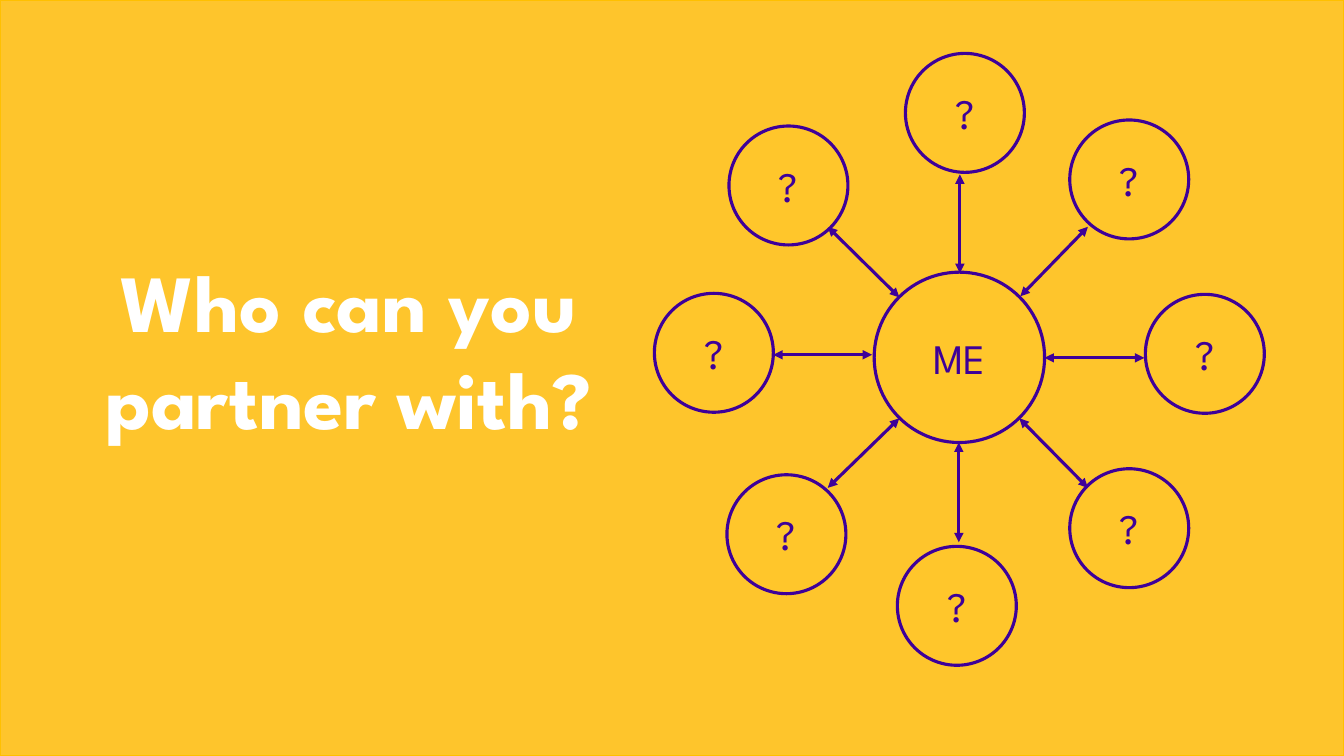
from lxml import etree
from pptx import Presentation
from pptx.dml.color import RGBColor
from pptx.enum import shapes, text
from pptx.oxml.ns import qn
from pptx.util import Inches, Pt

TITLE = "Who can you partner with?"
FONT = "League Spartan"
COLORS = {"panel": "FEC52C", "edge": "FFC000", "circle": "FFC62B",
          "purple": "3E0099", "title": "FFFFFF"}
ME = ("ME", 8.67, 2.7, 1.69)
PARTNER_SIZE = 1.18
PARTNERS = [
    ("?", 11.36, 2.92),
    ("?", 10.61, 1.19),
    ("?", 10.61, 4.65),
    ("?", 8.9, 5.42),
    ("?", 8.98, 0.53),
    ("?", 7.23, 1.25),
    ("?", 6.49, 2.91),
    ("?", 7.21, 4.71),
]
ARROWS = [
    (8.65, 3.52, 7.67, 3.52),
    (8.92, 2.95, 8.21, 2.25),
    (9.52, 2.71, 9.52, 1.73),
    (11.35, 3.55, 10.36, 3.55),
    (10.79, 4.84, 10.11, 4.15),
    (9.51, 5.38, 9.51, 4.39),
    (8.92, 4.15, 8.21, 4.84),
    (10.12, 2.94, 10.79, 2.25),
]


def color(name):
    return RGBColor.from_string(COLORS[name])


def set_font(p, size, name, bold=False):
    p.alignment = text.PP_ALIGN.CENTER
    p.font.name, p.font.size, p.font.bold = FONT, Pt(size), bold
    p.font.color.rgb = color(name)


def add_filled(s, kind, box, fill, line, width):
    sp = s.shapes.add_shape(kind, *map(Inches, box))
    sp.shadow.inherit = False
    sp.fill.solid()
    sp.fill.fore_color.rgb = color(fill)
    sp.line.color.rgb = color(line)
    sp.line.width = Pt(width)
    return sp


def add_circle(s, label, left, top, size, wrap=False):
    sp = add_filled(s, shapes.MSO_SHAPE.OVAL, (left, top, size, size),
                    "circle", "purple", 2.25)
    tf = sp.text_frame
    tf.word_wrap = wrap
    tf.vertical_anchor = text.MSO_ANCHOR.MIDDLE
    tf.text = label
    set_font(tf.paragraphs[0], 30, "purple")


def add_arrow(s, ends):
    cx = s.shapes.add_connector(shapes.MSO_CONNECTOR.STRAIGHT, *map(Inches, ends))
    cx.line.color.rgb = color("purple")
    cx.line.width = Pt(2.25)
    ln = cx.line._get_or_add_ln()
    for end in ("a:headEnd", "a:tailEnd"):
        etree.SubElement(ln, qn(end), type="triangle")
    etree.SubElement(cx.element.spPr, qn("a:effectLst"))


def add_title(s):
    sp = s.shapes.title
    sp.left, sp.top, sp.width, sp.height = map(Inches, (0.21, 2.44, 6.49, 2.05))
    tf = sp.text_frame
    tf.text = TITLE
    tf.word_wrap = True
    tf.auto_size = text.MSO_AUTO_SIZE.SHAPE_TO_FIT_TEXT
    tf.vertical_anchor = text.MSO_ANCHOR.TOP
    set_font(tf.paragraphs[0], 58, "title", bold=True)
    s.shapes.element.append(sp.element)


def main():
    prs = Presentation()
    prs.slide_width, prs.slide_height = Inches(13.33), Inches(7.5)
    s = prs.slides.add_slide(prs.slide_layouts[5])
    add_filled(s, shapes.MSO_SHAPE.RECTANGLE, (0, 0, 13.33, 7.5), "panel", "edge", 1)
    add_circle(s, *ME, wrap=True)
    for ends in ARROWS:
        add_arrow(s, ends)
    for partner in PARTNERS:
        add_circle(s, *partner, PARTNER_SIZE)
    add_title(s)
    prs.save("out.pptx")


if __name__ == "__main__":
    main()
